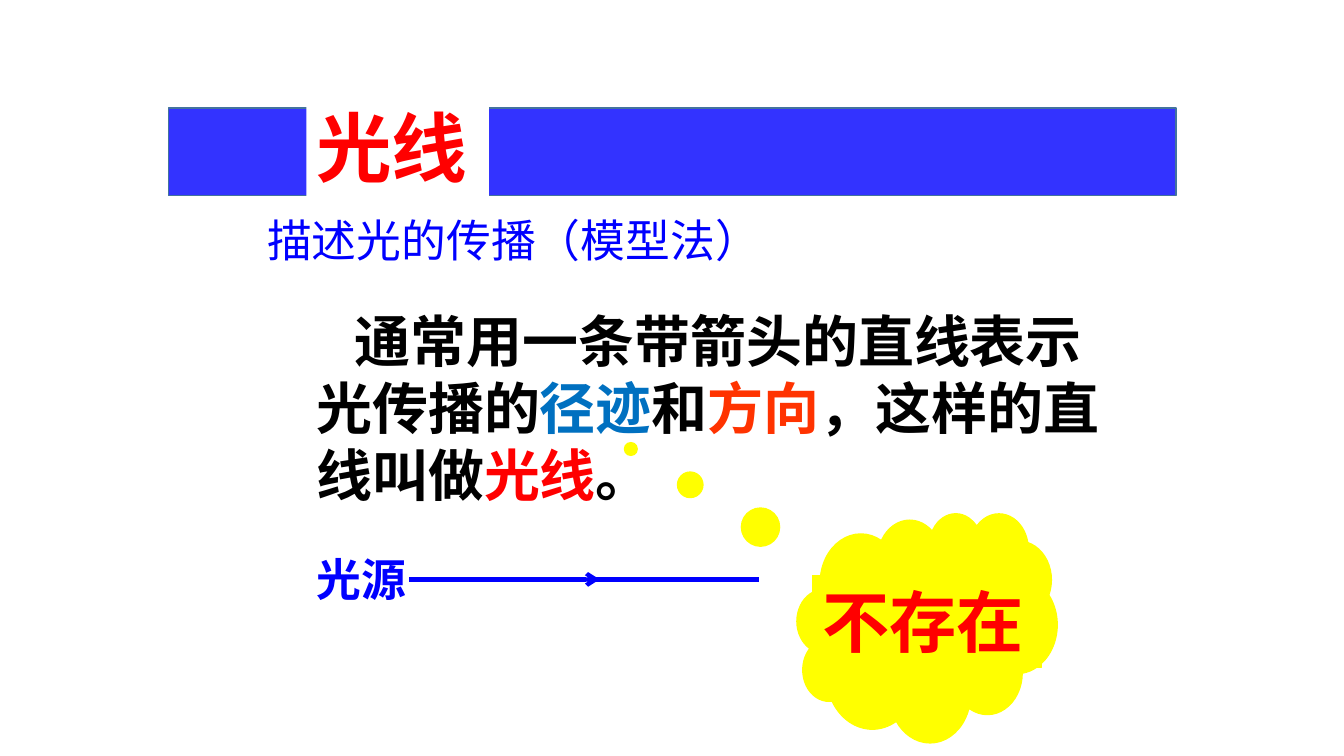
"""Build the slide that explains the light ray model."""
from dataclasses import dataclass

from lxml import etree
from pptx import Presentation
from pptx.dml.color import RGBColor
from pptx.enum.lang import MSO_LANGUAGE_ID as LANG
from pptx.enum.shapes import MSO_CONNECTOR, MSO_SHAPE
from pptx.enum.text import MSO_ANCHOR, PP_ALIGN
from pptx.oxml.ns import qn
from pptx.util import Cm, Pt

CJK = "Noto Sans CJK SC"
RED, BLUE, YELLOW, BLACK = "FF0000", "0000FF", "FFFF00", "000000"


@dataclass
class Box:
    left: float
    top: float
    width: float
    height: float
    kind: MSO_SHAPE | None = None
    fill: str = ""
    line: str = ""
    weight: float = 1

    def place(self) -> tuple:
        return tuple(Cm(v) for v in (self.left, self.top, self.width, self.height))


@dataclass
class Ray:
    start: float
    end: float
    arrow: bool = False


def rgb(color: str) -> RGBColor:
    return RGBColor.from_string(color)


def add_box(s, box: Box):
    if box.kind is None:
        return s.shapes.add_textbox(*box.place())
    sp = s.shapes.add_shape(box.kind, *box.place())
    sp.shadow.inherit = False
    sp.fill.solid()
    sp.fill.fore_color.rgb = rgb(box.fill)
    if box.line:
        sp.line.color.rgb = rgb(box.line)
        sp.line.width = Pt(box.weight)
    else:
        sp.line.fill.background()
    return sp


def add_text(sp, *runs: tuple[str, str], size: float, font: str,
             bold: bool = True, indent: float = 0) -> None:
    tf = sp.text_frame
    tf.word_wrap = True
    tf.vertical_anchor = MSO_ANCHOR.TOP
    p = tf.paragraphs[0]
    p.alignment = PP_ALIGN.LEFT
    if indent:
        p._p.get_or_add_pPr().set("indent", str(Cm(indent)))
    for text, color in runs:
        r = p.add_run()
        r.text = text
        r.font.size = Pt(size)
        r.font.name = font
        r.font.bold = bold
        r.font.color.rgb = rgb(color)
        r.font.language_id = LANG.SIMPLIFIED_CHINESE


def add_ray(s, ray: Ray, y: float = 14.6) -> None:
    line = s.shapes.add_connector(
        MSO_CONNECTOR.STRAIGHT, Cm(ray.start), Cm(y), Cm(ray.end), Cm(y))
    line.line.color.rgb = rgb(BLUE)
    line.line.width = Pt(3)
    if ray.arrow:
        ln = line.line._get_or_add_ln()
        etree.SubElement(ln, qn("a:tailEnd")).set("type", "arrow")
    etree.SubElement(line._element.spPr, qn("a:effectLst"))


def main() -> None:
    prs = Presentation()
    prs.slide_width, prs.slide_height = Cm(33.87), Cm(19.05)
    s = prs.slides.add_slide(prs.slide_layouts[6])

    rect = MSO_SHAPE.RECTANGLE
    add_box(s, Box(4.24, 2.72, 25.4, 2.21, rect, "3333FF", "43739E"))
    title = add_box(s, Box(7.72, 2.41, 4.6, 2.57, rect, "FFFFFF"))
    add_text(title, ("光线", RED), size=54, font=CJK)

    definition = add_box(s, Box(7.72, 7.59, 21.01, 5.38))
    add_text(definition, ("通常用一条带箭头的直线表示光传播的", BLACK),
             ("径迹", "0070C0"), ("和", BLACK), ("方向", "FF3300"),
             ("，这样的直线叫做", BLACK), ("光线", RED), ("。", BLACK),
             size=40, font=CJK, indent=0.97)

    for ray in (Ray(10.31, 15.11, arrow=True), Ray(14.91, 19.13)):
        add_ray(s, ray)
    source = add_box(s, Box(7.72, 13.79, 3, 1.63))
    add_text(source, ("光源", BLUE), size=32, font="Arial")

    cloud = add_box(s, Box(20.09, 12.93, 6.55, 5.77,
                           MSO_SHAPE.CLOUD_CALLOUT, YELLOW, YELLOW))
    cloud.adjustments[0], cloud.adjustments[1] = -1.14, -0.78
    label = add_box(s, Box(20.47, 14.5, 5.77, 2.31, rect, YELLOW, YELLOW, 0.75))
    add_text(label, ("不存在", RED), size=48, font="Times New Roman")

    subtitle = add_box(s, Box(6.48, 5.23, 21.54, 1.63))
    add_text(subtitle, ("描述光的传播（模型法）", BLUE), size=32,
             font="Times New Roman", bold=False)
    prs.save("out.pptx")


if __name__ == "__main__":
    main()
